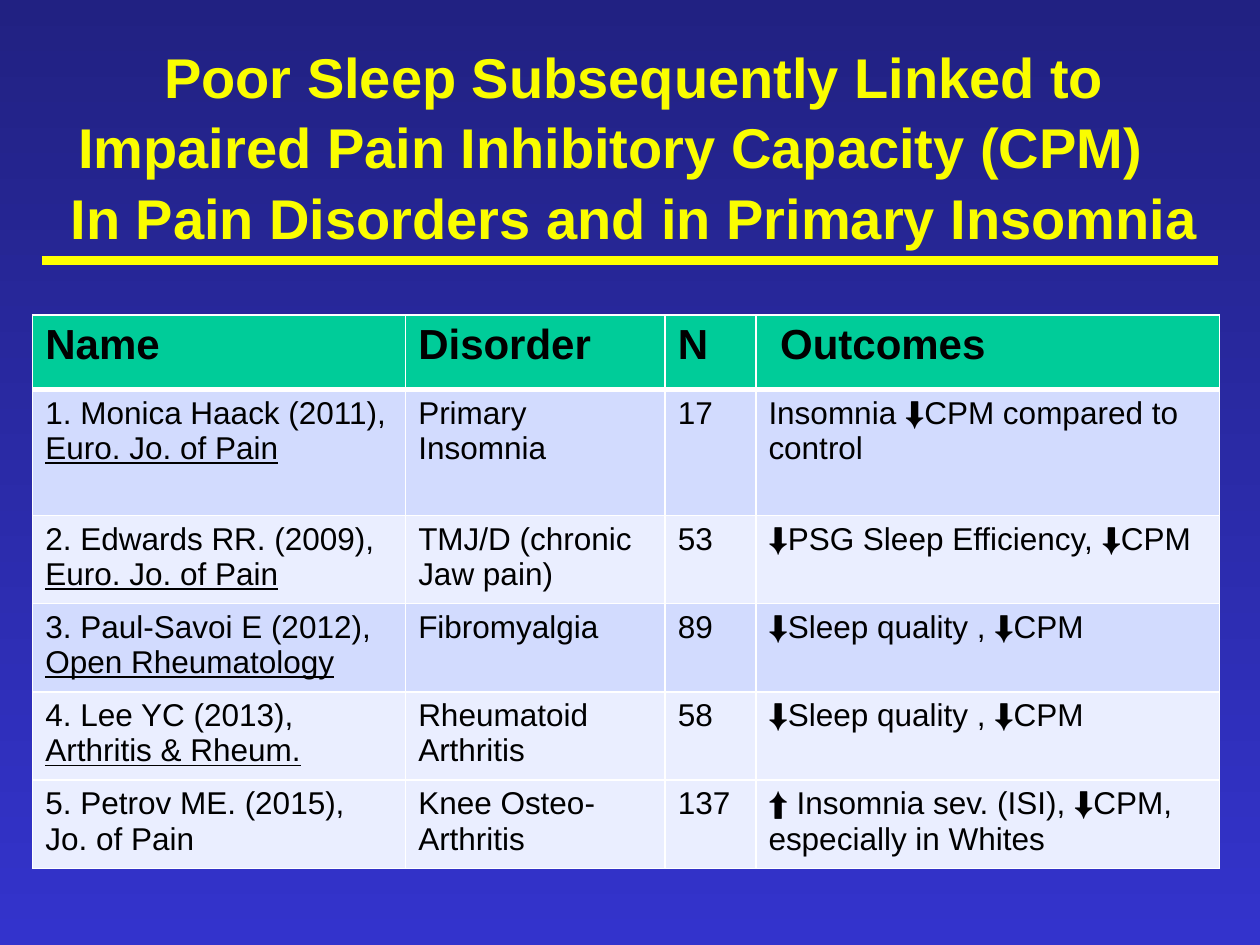
from typing import NamedTuple

from lxml.etree import SubElement
from pptx import Presentation
from pptx.dml.color import RGBColor
from pptx.enum.shapes import MSO_CONNECTOR as Connector
from pptx.enum.text import PP_ALIGN as Align
from pptx.oxml import parse_xml
from pptx.oxml.ns import nsdecls, qn
from pptx.util import Inches, Pt

WIDTH, HEIGHT = Inches(10), Inches(7.5)
FONT = "Arial"
NAVY = RGBColor(0x21, 0x21, 0x82)
BLUE = RGBColor(0x33, 0x33, 0xCC)
TITLE_YELLOW = RGBColor(0xFA, 0xFD, 0x00)
RULE_YELLOW = RGBColor(0xFF, 0xFF, 0x00)
BLACK = RGBColor(0x00, 0x00, 0x00)
WHITE = RGBColor(0xFF, 0xFF, 0xFF)
GREEN = RGBColor(0x00, 0xCC, 0x99)
LAVENDER = RGBColor(0xD2, 0xDB, 0xFE)
PALE = RGBColor(0xEA, 0xEE, 0xFF)

COLUMN_WIDTHS = (2.96, 2.06, 0.72, 3.68)
TABLE_LEFT, TABLE_TOP = 0.26, 2.5


class Study(NamedTuple):
    author: str
    journal: str
    disorder: str
    size: str
    outcome: str
    fill: RGBColor
    height: float = 0.7
    underline: bool = True
    own_line: bool = False


HEADINGS = ("Name", "Disorder", "N", " Outcomes")
STUDIES = (
    Study("1. Monica Haack (2011), ", "Euro. Jo. of Pain", "Primary Insomnia", "17",
          "Insomnia ⬇CPM compared to control", LAVENDER, height=1.0),
    Study("2. Edwards RR. (2009),", "Euro. Jo. of Pain", "TMJ/D (chronic Jaw pain)", "53",
          "⬇PSG Sleep Efficiency, ⬇CPM", PALE, own_line=True),
    Study("3. Paul-Savoi E (2012), ", "Open Rheumatology", "Fibromyalgia", "89",
          "⬇Sleep quality , ⬇CPM", LAVENDER),
    Study("4. Lee YC (2013), ", "Arthritis & Rheum.", "Rheumatoid Arthritis", "58",
          "⬇Sleep quality , ⬇CPM", PALE),
    Study("5. Petrov ME. (2015), ", "Jo. of Pain", "Knee Osteo-Arthritis", "137",
          "⬆ Insomnia sev. (ISI), ⬇CPM, especially in Whites", PALE, underline=False),
)


def write(paragraph, text: str, *, size: float = 18, color: RGBColor = BLACK,
          bold: bool = False, underline: bool = False) -> None:
    run = paragraph.add_run()
    run.text = text
    font = run.font
    font.name, font.size, font.bold = FONT, Pt(size), bold
    font.underline = underline
    font.color.rgb = color


def paint_background(slide) -> None:
    fill = slide.background.fill
    fill.gradient()
    fill.gradient_angle = 270
    for stop, color in zip(fill.gradient_stops, (NAVY, BLUE)):
        stop.color.rgb = color


def draw_title(slide, lines: tuple[str, ...]) -> None:
    box = slide.shapes.add_textbox(Inches(0.29), Inches(0.26), Inches(9.49), Inches(1.72))
    frame = box.text_frame
    frame.word_wrap = True
    for index, line in enumerate(lines):
        paragraph = frame.add_paragraph() if index else frame.paragraphs[0]
        paragraph.alignment = Align.CENTER
        paragraph.line_spacing = 1.05
        write(paragraph, line, size=32, color=TITLE_YELLOW, bold=True)


def draw_rule(slide) -> None:
    margin, top = WIDTH // 30, Inches(2.07)
    rule = slide.shapes.add_connector(Connector.STRAIGHT, margin, top, WIDTH - margin, top)
    rule.line.color.rgb = RULE_YELLOW
    rule.line.width = Pt(5.25)
    SubElement(rule._element.spPr, qn("a:effectLst"))


def style_cell(cell, fill: RGBColor, top: float = 1, bottom: float = 1) -> None:
    cell.fill.solid()
    cell.fill.fore_color.rgb = fill
    properties = cell._tc.get_or_add_tcPr()
    borders = (("L", 1), ("R", 1), ("T", top), ("B", bottom))
    for index, (side, width) in enumerate(borders):
        properties.insert(index, parse_xml(
            f'<a:ln{side} {nsdecls("a")} w="{Pt(width)}"><a:solidFill>'
            f'<a:srgbClr val="{WHITE}"/></a:solidFill></a:ln{side}>'))


def draw_table(slide) -> None:
    heights = (0.59, *(study.height for study in STUDIES))
    table = slide.shapes.add_table(
        len(heights), len(COLUMN_WIDTHS), Inches(TABLE_LEFT), Inches(TABLE_TOP),
        Inches(sum(COLUMN_WIDTHS)), Inches(sum(heights))).table
    for column, width in zip(table.columns, COLUMN_WIDTHS):
        column.width = Inches(width)
    for row, height in zip(table.rows, heights):
        row.height = Inches(height)
    for column, heading in enumerate(HEADINGS):
        cell = table.cell(0, column)
        style_cell(cell, GREEN, bottom=3)
        write(cell.text_frame.paragraphs[0], heading, size=24, bold=True)
    for row, study in enumerate(STUDIES, start=1):
        texts = (study.author, study.disorder, study.size, study.outcome)
        for column, text in enumerate(texts):
            cell = table.cell(row, column)
            style_cell(cell, study.fill, top=3 if row == 1 else 1)
            write(cell.text_frame.paragraphs[0], text)
        frame = table.cell(row, 0).text_frame
        paragraph = frame.add_paragraph() if study.own_line else frame.paragraphs[0]
        write(paragraph, study.journal, underline=study.underline)


def main() -> None:
    presentation = Presentation()
    presentation.slide_width, presentation.slide_height = WIDTH, HEIGHT
    slide = presentation.slides.add_slide(presentation.slide_layouts[6])
    paint_background(slide)
    draw_title(slide, (
        "Poor Sleep Subsequently Linked to Impaired Pain Inhibitory Capacity (CPM)   ",
        "In Pain Disorders and in Primary Insomnia"))
    draw_rule(slide)
    draw_table(slide)
    presentation.save("out.pptx")


if __name__ == "__main__":
    main()
